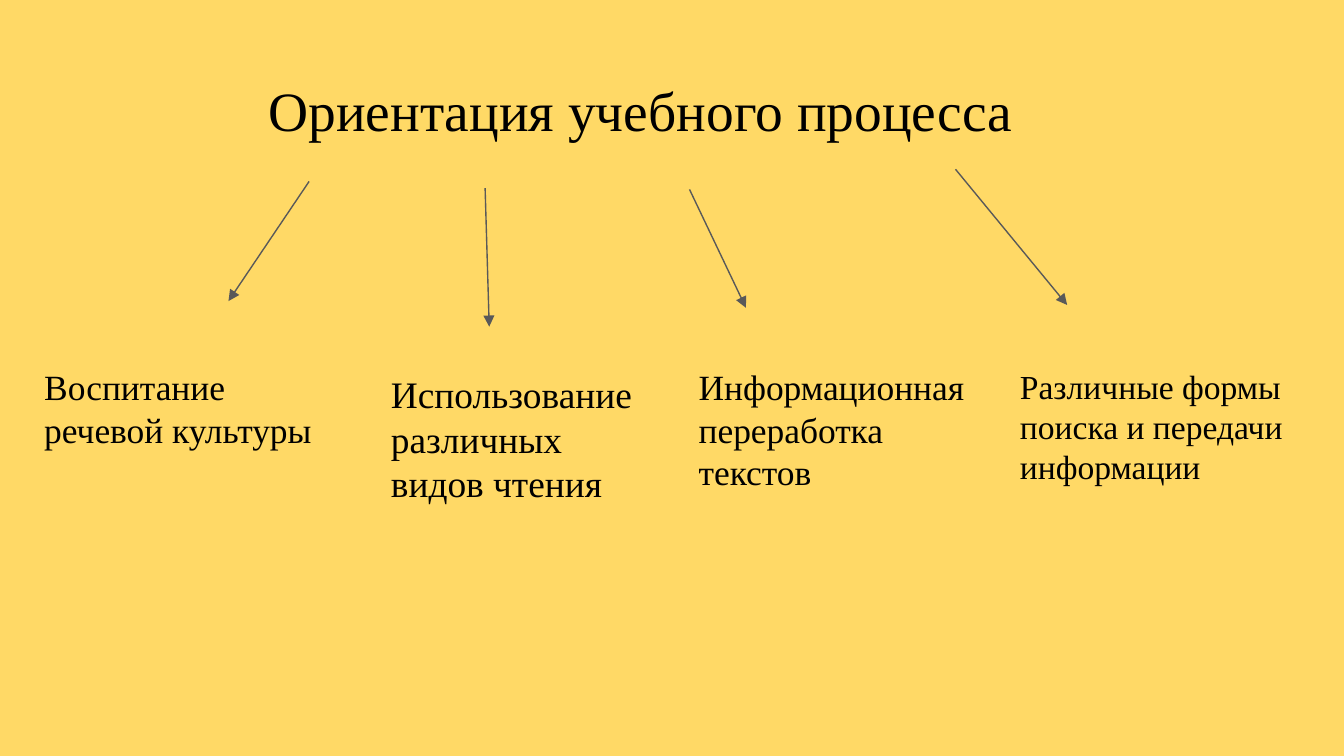
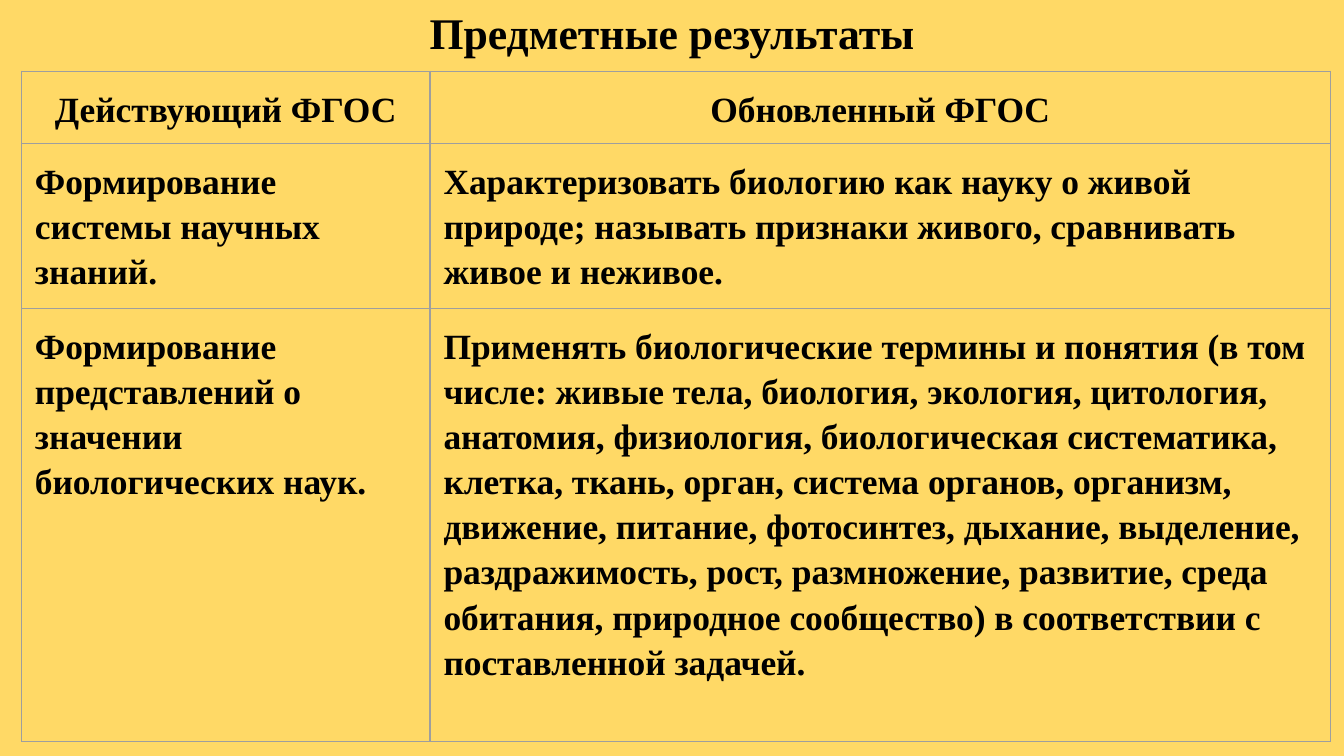
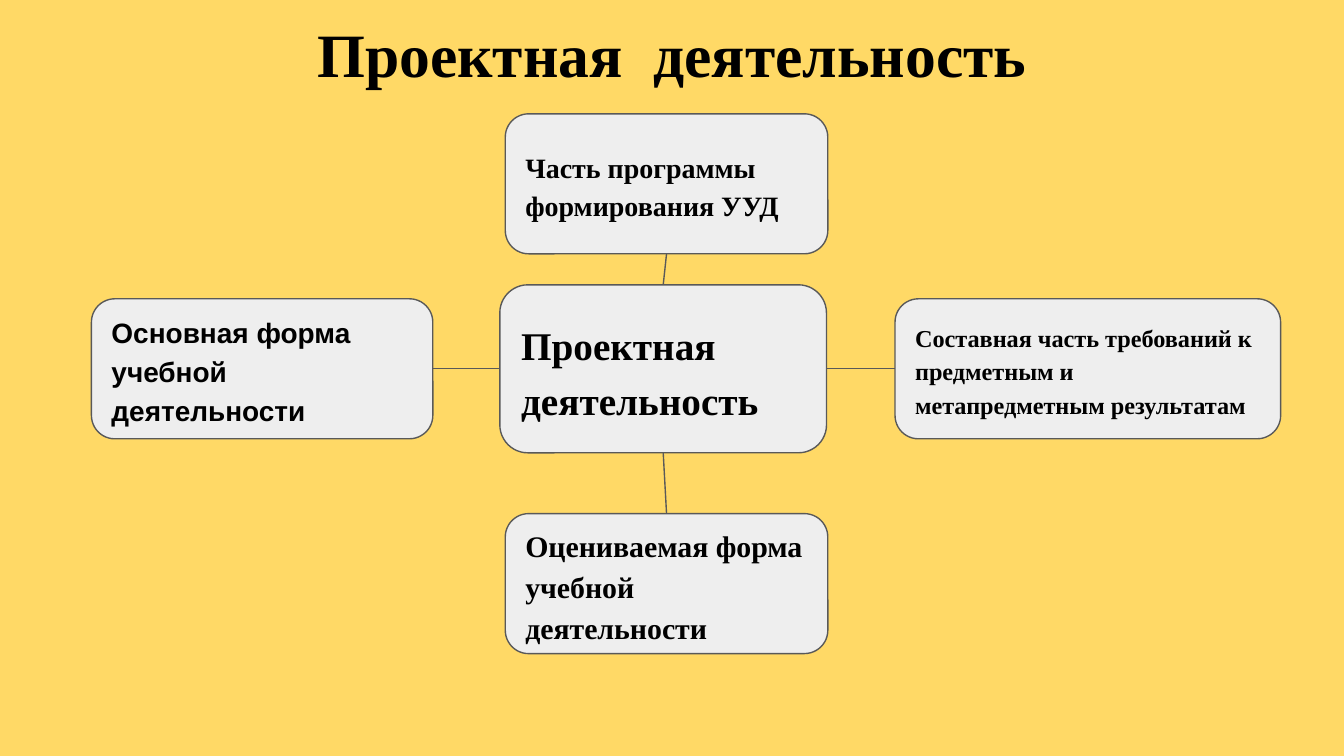
from lxml import etree
from pptx import Presentation
from pptx import util as u
from pptx.dml import color
from pptx.enum import shapes, text
from pptx.oxml import ns

Pt = u.Pt
COLORS = {"background": "FFD966", "ink": "000000", "line": "595959",
          "box": "EEEEEE", "border": "9E9E9E"}
SERIF, SANS = "Times New Roman", "Arial"
LEFT, CENTER = text.PP_ALIGN.LEFT, text.PP_ALIGN.CENTER
TOP, MIDDLE, BOTTOM = (text.MSO_ANCHOR.TOP, text.MSO_ANCHOR.MIDDLE,
                       text.MSO_ANCHOR.BOTTOM)
INSET = 7.2
MARGINS = {f"margin_{side}": Pt(INSET) for side in ("left", "top", "right", "bottom")}
LINE_WIDTH = 0.75


def rgb(name):
    return color.RGBColor.from_string(COLORS[name])


def set_all(target, values):
    for name, value in values.items():
        setattr(target, name, value)


class Deck:
    def __init__(self, width, height):
        self.presentation = Presentation()
        set_all(self.presentation, {"slide_width": Pt(width), "slide_height": Pt(height)})
        background = self.presentation.slide_master.background.fill
        background.solid()
        background.fore_color.rgb = rgb("background")
        self.slide = None

    def add_slide(self, title, place, size, bold=True):
        layout = self.presentation.slide_layouts[0]
        self.slide = self.presentation.slides.add_slide(layout)
        subtitle = self.slide.placeholders[1].element
        subtitle.getparent().remove(subtitle)
        shape = self.slide.shapes.title
        names = ("left", "top", "width", "height")
        set_all(shape, dict(zip(names, map(Pt, place))))
        self.fill_frame(shape.text_frame, title, size, bold=bold, align=CENTER,
                        anchor=BOTTOM)

    def fill_frame(self, frame, words, size, font=SERIF, bold=False, align=LEFT,
                   anchor=TOP, spacing=1.0, auto_size=text.MSO_AUTO_SIZE.NONE):
        set_all(frame, MARGINS)
        set_all(frame, {"word_wrap": True, "auto_size": auto_size,
                        "vertical_anchor": anchor})
        self.fill_paragraph(frame.paragraphs[0], words, size, font, bold, align, spacing)

    def fill_paragraph(self, paragraph, words, size, font, bold, align, spacing):
        set_all(paragraph, {"alignment": align, "line_spacing": spacing})
        run = paragraph.add_run()
        run.text = words
        set_all(run.font, {"name": font, "size": Pt(size), "bold": bold})
        run.font.color.rgb = rgb("ink")

    def label(self, words, place, size):
        shape = self.slide.shapes.add_textbox(*map(Pt, place))
        self.fill_frame(shape.text_frame, words, size,
                        auto_size=text.MSO_AUTO_SIZE.SHAPE_TO_FIT_TEXT)

    def box(self, words, place, size, font=SERIF):
        shape = self.slide.shapes.add_shape(
            shapes.MSO_SHAPE.ROUNDED_RECTANGLE, *map(Pt, place))
        shape.shadow.inherit = False
        shape.fill.solid()
        shape.fill.fore_color.rgb = rgb("box")
        self.stroke(shape.line)
        self.fill_frame(shape.text_frame, words, size, font, bold=True,
                        anchor=MIDDLE, spacing=1.15)
        return shape

    def stroke(self, line):
        line.color.rgb = rgb("line")
        line.width = Pt(LINE_WIDTH)

    def connector(self, start=(0, 0), end=(0, 0)):
        connector = self.slide.shapes.add_connector(
            shapes.MSO_CONNECTOR.STRAIGHT, *map(Pt, (*start, *end)))
        self.stroke(connector.line)
        etree.SubElement(connector.element.spPr, ns.qn("a:effectLst"))
        return connector

    def arrow(self, start, end):
        self.connector(start, end)
        outline = self.slide.shapes[-1].element.spPr.find(ns.qn("a:ln"))
        etree.SubElement(outline, ns.qn("a:tailEnd"), type="triangle")

    def join(self, first, first_side, second, second_side):
        connector = self.connector()
        connector.begin_connect(first, first_side)
        connector.end_connect(second, second_side)

    def table(self, rows, left, top, widths, heights, size):
        frame = self.slide.shapes.add_table(
            len(rows), len(widths), Pt(left), Pt(top), Pt(sum(widths)), Pt(sum(heights)))
        table = frame.table
        set_all(table, {"first_row": False, "horz_banding": False})
        for column, width in zip(table.columns, widths):
            column.width = Pt(width)
        for row, height, entries in zip(table.rows, heights, rows):
            row.height = Pt(height)
            is_header = entries is rows[0]
            for cell, words in zip(row.cells, entries):
                self.cell(cell, words, size, CENTER if is_header else LEFT)

    def cell(self, cell, words, size, align):
        set_all(cell, MARGINS)
        cell.vertical_anchor = TOP
        self.fill_paragraph(cell.text_frame.paragraphs[0], words, size,
                            SERIF, True, align, 1.15)
        properties = cell._tc.get_or_add_tcPr()
        for tag in ("a:lnL", "a:lnR", "a:lnT", "a:lnB"):
            border = etree.SubElement(properties, ns.qn(tag), w=str(int(Pt(LINE_WIDTH))))
            fill = etree.SubElement(border, ns.qn("a:solidFill"))
            etree.SubElement(fill, ns.qn("a:srgbClr"), val=COLORS["border"])
        cell.fill.background()


def orientation(deck):
    deck.add_slide("Ориентация учебного процесса", (122.4, 15.1, 442.1, 68.4),
                   29.7, bold=False)
    # Each branch: arrow start, arrow end, label, label place, text size
    branches = [
        ((165.6, 97.2), (122.4, 161.3), "Воспитание речевой культуры",
         (16.6, 188.6, 172.1, 60.5), 19),
        ((259.9, 100.8), (262.1, 175), "Использование различных видов чтения",
         (202.3, 191.5, 157.7, 87.1), 20),
        ((369.4, 101.5), (399.6, 164.9), "Информационная переработка текстов",
         (367.2, 188.6, 157.7, 83.5), 19),
        ((511.9, 90.7), (571.7, 163.4), "Различные формы поиска и передачи информации",
         (539.3, 188.6, 172.1, 79.9), 18),
    ]
    for start, end, words, place, size in branches:
        deck.arrow(start, end)
        deck.label(words, place, size)


def subject_results(deck):
    deck.add_slide("Предметные результаты", (24.5, 6.5, 671, 31.7), 23.4)
    rows = [
        ("Действующий ФГОС", "Обновленный ФГОС"),
        ("Формирование системы научных знаний.",
         "Характеризовать биологию как науку о живой природе; называть признаки "
         "живого, сравнивать живое и неживое."),
        ("Формирование представлений о значении биологических наук.",
         "Применять биологические термины и понятия (в том числе: живые тела, "
         "биология, экология, цитология, анатомия, физиология, биологическая "
         "систематика, клетка, ткань, орган, система органов, организм, движение, "
         "питание, фотосинтез, дыхание, выделение, раздражимость, рост, "
         "размножение, развитие, среда обитания, природное сообщество) "
         "в соответствии с поставленной задачей."),
    ]
    deck.table(rows, 11.5, 38.2, (218.9, 482.4), (36.7, 88.6, 231.8), 19)


def project_work(deck):
    deck.add_slide("Проектная  деятельность", (24.5, 16.6, 671, 38.9), 33)
    hub = deck.box("Проектная деятельность", (267.8, 152.6, 175, 90), 21)
    # Each satellite: words, left, top, width, text size, font, hub side, own side
    satellites = [
        ("Составная часть требований к предметным и метапредметным результатам",
         479.5, 160.1, 206.6, 13, SERIF, 3, 1),
        ("Основная форма учебной деятельности", 49, 160.1, 182.9, 15, SANS, 1, 3),
        ("Часть программы формирования УУД", 270.7, 61, 172.8, 15, SERIF, 0, 2),
        ("Оцениваемая форма учебной деятельности",
         270.7, 275.2, 172.8, 16, SERIF, 2, 0),
    ]
    for words, left, top, width, size, font, hub_side, own_side in satellites:
        satellite = deck.box(words, (left, top, width, 75), size, font)
        deck.join(hub, hub_side, satellite, own_side)


def main():
    deck = Deck(720, 405)
    orientation(deck)
    subject_results(deck)
    project_work(deck)
    deck.presentation.save("out.pptx")


if __name__ == "__main__":
    main()
